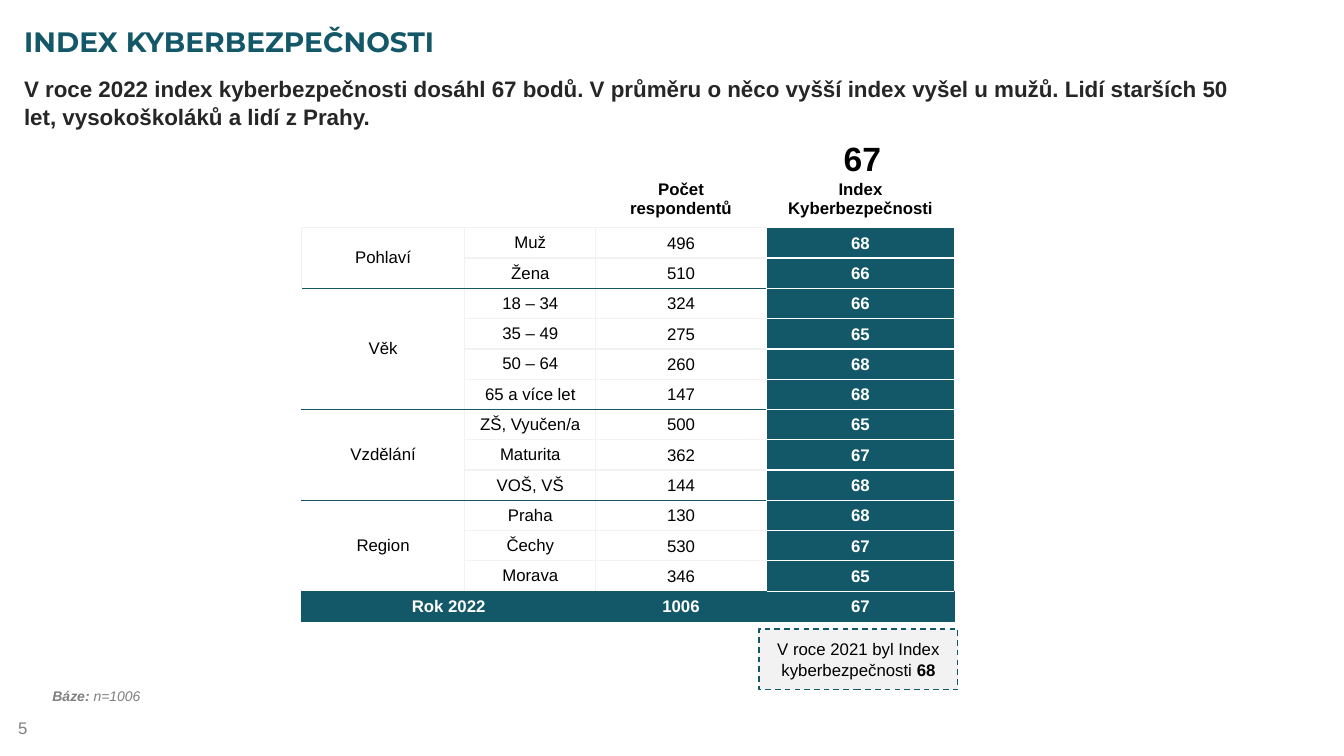
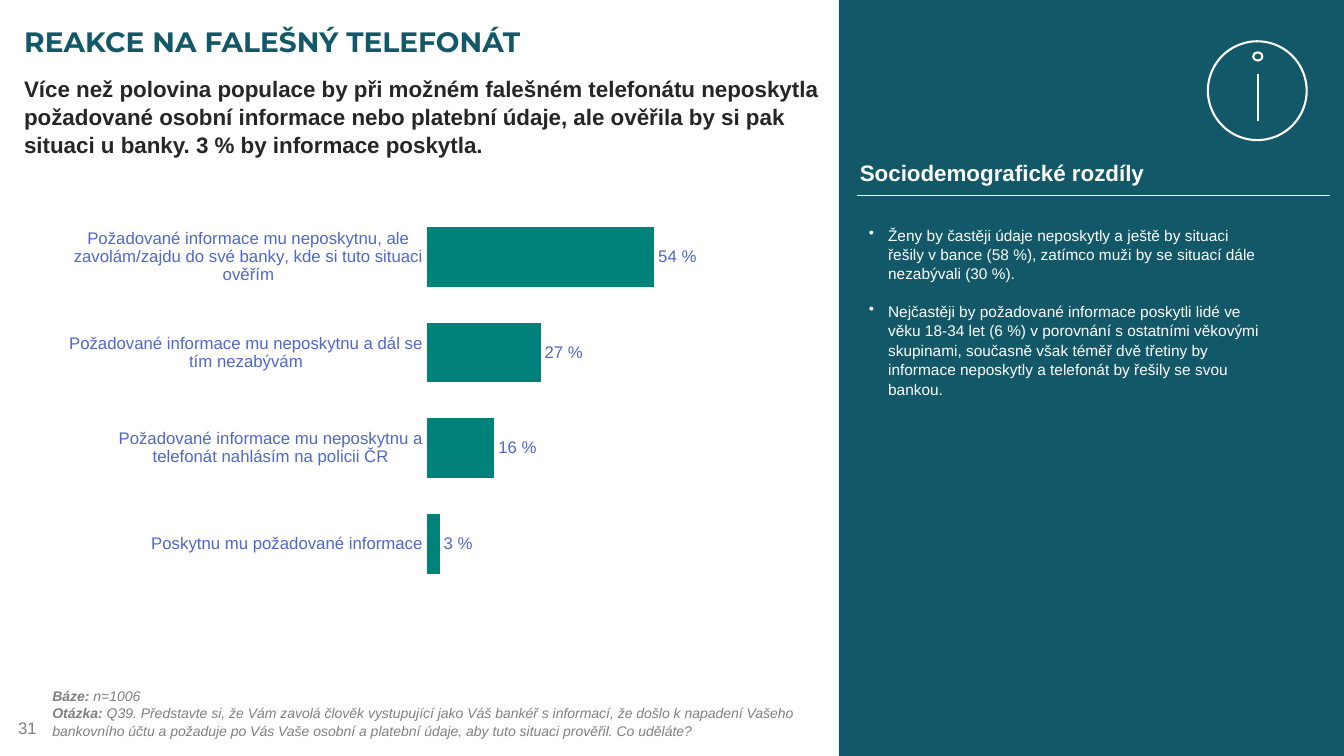
from dataclasses import dataclass

from lxml import etree
from pptx import Presentation
from pptx.chart.data import CategoryChartData
from pptx.dml.color import RGBColor
from pptx.enum import chart as ch, dml, shapes, text
from pptx.oxml import parse_xml
from pptx.oxml.ns import nsdecls, qn
from pptx.util import Inches, Pt

CENTER = text.PP_ALIGN.CENTER
LEFT = text.PP_ALIGN.LEFT
MIDDLE = text.MSO_ANCHOR.MIDDLE
TOP = text.MSO_ANCHOR.TOP


@dataclass(frozen=True)
class Theme:
    """Colours, fonts and type sizes of the deck."""
    teal: str = "135868"
    bar: str = "00827A"
    chart_text: str = "4E68CA"
    white: str = "FFFFFF"
    pale: str = "F2F2F2"
    black: str = "000000"
    dark: str = "262626"
    grey: str = "808080"
    body_font: str = "Arial"
    title_font: str = "Montserrat"
    title: int = 20
    lead: int = 16
    score: int = 24
    label: int = 12
    bullet: int = 11
    note: int = 10


THEME = Theme()
NO_GRID_STYLE = "{2D5ABB26-0587-4C30-8999-92F81FD0307C}"
GROUPS = [
    ("Pohlaví", [("Muž", 496, 68), ("Žena", 510, 66)]),
    ("Věk", [("18 – 34", 324, 66), ("35 – 49", 275, 65),
             ("50 – 64", 260, 68), ("65 a více let", 147, 68)]),
    ("Vzdělání", [("ZŠ, Vyučen/a", 500, 65), ("Maturita", 362, 67), ("VOŠ, VŠ", 144, 68)]),
    ("Region", [("Praha", 130, 68), ("Čechy", 530, 67), ("Morava", 346, 65)]),
]
REACTIONS = [
    ("Požadované informace mu neposkytnu, ale zavolám/zajdu do své banky, "
     "kde si tuto situaci ověřím", 54),
    ("Požadované informace mu neposkytnu a dál se tím nezabývám", 27),
    ("Požadované informace mu neposkytnu a telefonát nahlásím na policii ČR", 16),
    ("Poskytnu mu požadované informace", 3),
]


def rgb(color):
    """Turn a hex string into a colour."""
    return RGBColor.from_string(color)


def style_font(font, size, color, bold=False, italic=False, name=THEME.body_font):
    """Set the look of a font."""
    font.name, font.size = name, Pt(size)
    font.bold, font.italic = bold, italic
    font.color.rgb = rgb(color)


def write(frame, *paragraphs, size=THEME.label, color=THEME.black, bold=False, italic=False,
          font=THEME.body_font, align=LEFT, anchor=TOP, margins=(0.1, 0.05, 0.1, 0.05),
          spacing=1.05, gap=0, bullet=False):
    """Fill a frame; a paragraph is a string or a list of (text, bold) spans."""
    frame.word_wrap = True
    frame.vertical_anchor = anchor
    (frame.margin_left, frame.margin_top,
     frame.margin_right, frame.margin_bottom) = map(Inches, margins)
    for index, spans in enumerate(paragraphs):
        para = frame.add_paragraph() if index else frame.paragraphs[0]
        para.alignment, para.line_spacing = align, spacing
        if index and gap:
            para.space_before = Pt(gap)
        if bullet:
            properties = para._p.get_or_add_pPr()
            properties.set("marL", str(Inches(0.19)))
            properties.set("indent", str(-Inches(0.19)))
            etree.SubElement(properties, qn("a:buChar")).set("char", "•")
        for words, strong in [(spans, bold)] if isinstance(spans, str) else spans:
            span = para.add_run()
            span.text = words
            style_font(span.font, size, color, strong, italic, font)


def add_text(page, area, *paragraphs, **style):
    """Add a text box."""
    box = page.shapes.add_textbox(*map(Inches, area))
    write(box.text_frame, *paragraphs, **style)


def add_box(parent, kind, area, fill=None, line=None, width=1.0, dash=None):
    """Add a preset shape to a slide or group."""
    box = parent.shapes.add_shape(kind, *map(Inches, area))
    box.shadow.inherit = False
    if fill:
        box.fill.solid()
        box.fill.fore_color.rgb = rgb(fill)
    else:
        box.fill.background()
    if line:
        box.line.color.rgb = rgb(line)
        box.line.width = Pt(width)
        box.line.dash_style = dash
    else:
        box.line.fill.background()
    return box


def add_line(parent, start, end, width):
    """Add a straight white line."""
    line = parent.shapes.add_connector(shapes.MSO_CONNECTOR.STRAIGHT, *map(Inches, start + end))
    line.line.color.rgb = rgb(THEME.white)
    line.line.width = Pt(width)
    etree.SubElement(line._element.spPr, qn("a:effectLst"))


def add_page(deck, number, title, lead, lead_width, notes, notes_width):
    """Add a slide with its title, lead text, notes and page number."""
    page = deck.slides.add_slide(deck.slide_layouts[5])
    heading = page.shapes.title
    heading.left, heading.top, heading.width, heading.height = map(
        Inches, (0.14, 0.14, 13.05, 0.53))
    write(heading.text_frame, title, size=THEME.title, color=THEME.teal, bold=True,
          font=THEME.title_font, anchor=MIDDLE, spacing=1)
    add_text(page, (0.14, 0.68, lead_width, 0.97), lead,
             size=THEME.lead, color=THEME.dark, bold=True)
    add_text(page, (0.52, 6.81, notes_width, 0.5), *notes, size=THEME.note,
             color=THEME.grey, italic=True, margins=(0, 0, 0, 0))
    add_text(page, (0.05, 7.02, 3.11, 0.4), str(number), color=THEME.grey,
             anchor=MIDDLE, margins=(0.13, 0.07, 0.13, 0.07))
    return page


def set_cell(cell, words, edges, fill=None, tight=False, **style):
    """Write a table cell and draw its left, right, top and bottom edges."""
    margins = (0.01, 0.01, 0.01, 0) if tight else (0.1, 0.05, 0.1, 0.05)
    write(cell.text_frame, words, align=CENTER, spacing=1, **style)
    (cell.margin_left, cell.margin_top,
     cell.margin_right, cell.margin_bottom) = map(Inches, margins)
    cell.vertical_anchor = MIDDLE
    properties = cell._tc.get_or_add_tcPr()
    for side, color in zip("LRTB", edges):
        properties.append(parse_xml(
            f'<a:ln{side} {nsdecls("a")} w="12700"><a:solidFill>'
            f'<a:srgbClr val="{color}"/></a:solidFill></a:ln{side}>'))
    if fill:
        cell.fill.solid()
        cell.fill.fore_color.rgb = rgb(fill)
    else:
        cell.fill.background()


def add_index_table(page):
    """Add the table of index values by respondent group."""
    teal, white, pale = THEME.teal, THEME.white, THEME.pale
    total_row = 1 + sum(len(members) for _, members in GROUPS)
    widths, heights = (1.62, 1.3, 1.69, 1.87), [0.57] + [0.3] * total_row
    table = page.shapes.add_table(
        len(heights), len(widths),
        *map(Inches, (2.99, 1.69, sum(widths), sum(heights)))).table
    table.first_row = table.horz_banding = False
    table._tbl.tblPr.find(qn("a:tableStyleId")).text = NO_GRID_STYLE
    for column, width in zip(table.columns, widths):
        column.width = Inches(width)
    for row, height in zip(table.rows, heights):
        row.height = Inches(height)
    for row in (0, total_row):
        table.cell(row, 0).merge(table.cell(row, 1))

    set_cell(table.cell(0, 0), "", (white, white, white, pale))
    for column, words, below in ((2, "Počet respondentů", pale),
                                 (3, "Index Kyberbezpečnosti", white)):
        set_cell(table.cell(0, column), words, (white, white, white, below), bold=True)

    row = 1
    for group, members in GROUPS:
        last = row + len(members) - 1
        above = pale if row == 1 else teal
        table.cell(row, 0).merge(table.cell(last, 0))
        set_cell(table.cell(row, 0), group, (pale if row == 1 else white, pale, above, teal))
        for name, count, index in members:
            below = teal if row == last else pale
            set_cell(table.cell(row, 1), name, (pale, pale, above, below))
            set_cell(table.cell(row, 2), str(count), (pale, white, above, below), tight=True)
            set_cell(table.cell(row, 3), str(index), (white,) * 4, fill=teal, tight=True,
                     color=white, bold=True)
            above, row = pale, row + 1

    for column, words, above in ((0, "Rok 2022", teal), (2, "1006", teal), (3, "67", white)):
        set_cell(table.cell(total_row, column), words, (teal, teal, above, teal), fill=teal,
                 tight=column == 3, color=white, bold=True)


def add_reaction_chart(page):
    """Add the bar chart of reactions to the call."""
    data = CategoryChartData()
    data.categories = [name for name, _ in REACTIONS]
    data.add_series("Series 1", [value for _, value in REACTIONS])
    chart = page.shapes.add_chart(
        ch.XL_CHART_TYPE.BAR_CLUSTERED, *map(Inches, (0.68, 1.7, 7.73, 4.17)), data).chart
    chart.has_legend = chart.has_title = False
    style_font(chart.font, THEME.label, THEME.chart_text)

    names = chart.category_axis
    names.reverse_order = True
    names.major_tick_mark = ch.XL_TICK_MARK.NONE
    names.format.line.fill.background()
    style_font(names.tick_labels.font, THEME.label, THEME.chart_text)
    values = chart.value_axis
    values.minimum_scale, values.maximum_scale = 0, 100
    values.has_major_gridlines = values.visible = False

    plot = chart.plots[0]
    plot.gap_width, plot.vary_by_categories = 60, False
    bars = plot.series[0]
    bars.format.fill.solid()
    bars.format.fill.fore_color.rgb = rgb(THEME.bar)
    plot.has_data_labels = True
    labels = plot.data_labels
    labels.show_value = True
    labels.number_format, labels.number_format_is_linked = '#,##0\\ "%"', False
    labels.position = ch.XL_LABEL_POSITION.OUTSIDE_END
    style_font(labels.font, THEME.label, THEME.chart_text)

    area = chart._chartSpace.chart.plotArea
    for layout in area.findall(qn("c:layout")):
        area.remove(layout)
    settings = (("layoutTarget", "inner"), ("xMode", "edge"), ("yMode", "edge"),
                ("x", 0.46), ("y", 0.09), ("w", 0.54), ("h", 0.91))
    parts = "".join(f'<c:{tag} val="{value}"/>' for tag, value in settings)
    area.insert(0, parse_xml(
        f'<c:layout {nsdecls("c")}><c:manualLayout>{parts}</c:manualLayout></c:layout>'))


def add_info_icon(page):
    """Add the outlined information sign."""
    icon = page.shapes.add_group_shape()
    for area in ((11.98, 0.41, 0.98, 0.98), (12.43, 0.52, 0.09, 0.08)):
        add_box(icon, shapes.MSO_SHAPE.OVAL, area, line=THEME.white, width=1.5)
    add_line(icon, (12.48, 0.73), (12.48, 1.2), 1.5)


def build_index(deck):
    """Build the slide with the security index."""
    page = add_page(
        deck, 5, "INDEX KYBERBEZPEČNOSTI",
        "V roce 2022 index kyberbezpečnosti dosáhl 67 bodů. V průměru o něco vyšší index vyšel "
        "u mužů. Lidí starších 50 let, vysokoškoláků a lidí z Prahy.", 12.2,
        [[("Báze: ", True), ("n=1006", False)]], 11.58)
    add_index_table(page)
    callout = add_box(page, shapes.MSO_SHAPE.RECTANGLE, (7.53, 6.24, 1.97, 0.6),
                      THEME.pale, THEME.teal, dash=dml.MSO_LINE.DASH)
    write(callout.text_frame,
          [("V roce 2021 byl Index kyberbezpečnosti ", False), ("68", True)],
          align=CENTER, anchor=MIDDLE)
    add_text(page, (8.27, 1.3, 0.63, 0.5), "67", size=THEME.score, bold=True)


def build_reaction(deck):
    """Build the slide on reactions to a fraudulent call."""
    page = add_page(
        deck, 31, "REAKCE NA FALEŠNÝ TELEFONÁT",
        "Více než polovina populace by při možném falešném telefonátu neposkytla požadované "
        "osobní informace nebo platební údaje, ale ověřila by si pak situaci u banky. "
        "3 % by informace poskytla.", 8.18,
        [[("Báze: ", True), ("n=1006", False)],
         [("Otázka: ", True),
          ("Q39. Představte si, že Vám zavolá člověk vystupující jako Váš bankéř s informací, "
           "že došlo k napadení Vašeho bankovního účtu a požaduje po Vás Vaše osobní a platební "
           "údaje, aby tuto situaci prověřil. Co uděláte?", False)]], 7.8)
    add_reaction_chart(page)
    add_box(page, shapes.MSO_SHAPE.RECTANGLE, (8.32, 0, 5.01, 7.5), THEME.teal)
    add_line(page, (8.5, 1.94), (13.19, 1.94), 0.5)
    add_text(page, (8.43, 1.52, 3.4, 0.37), "Sociodemografické rozdíly",
             size=THEME.lead, color=THEME.white, bold=True)
    add_text(page, (8.52, 2.18, 4.17, 1.95),
             "Ženy by častěji údaje neposkytly a ještě by situaci řešily v bance (58 %), "
             "zatímco muži by se situací dále nezabývali (30 %).",
             "Nejčastěji by požadované informace poskytli lidé ve věku 18-34 let (6 %) "
             "v porovnání s ostatními věkovými skupinami, současně však téměř dvě třetiny by "
             "informace neposkytly a telefonát by řešily se svou bankou.",
             size=THEME.bullet, color=THEME.white, gap=13, bullet=True)
    add_info_icon(page)


def main():
    """Build and save the deck."""
    deck = Presentation()
    deck.slide_width, deck.slide_height = Inches(13.33), Inches(7.5)
    build_index(deck)
    build_reaction(deck)
    deck.save("out.pptx")


if __name__ == "__main__":
    main()
